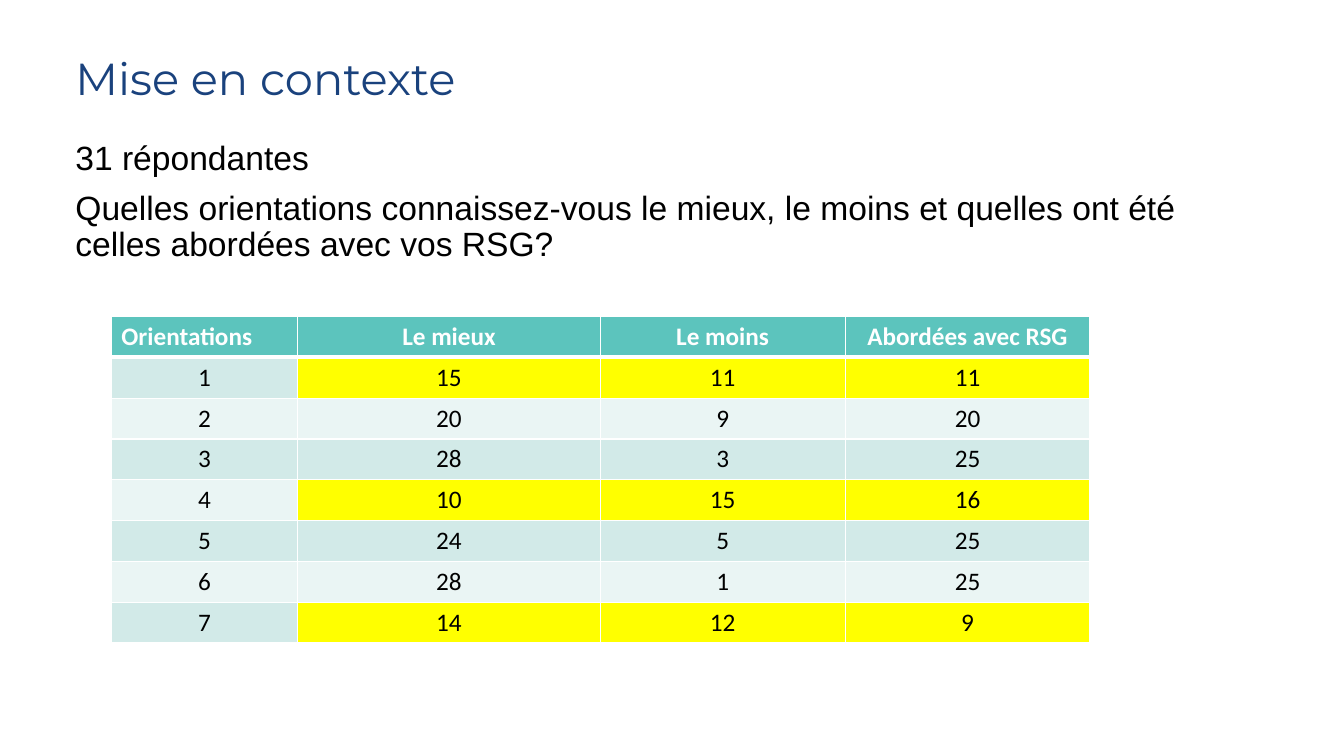
from pptx import Presentation
from pptx.dml.color import RGBColor
from pptx.enum.text import MSO_ANCHOR as Anchor, PP_ALIGN as Align
from pptx.oxml import parse_xml
from pptx.oxml.ns import nsdecls
from pptx.util import Pt

PX = 4572
WHITE, BLACK, NAVY = "FFFFFF", "000000", "1A427D"
TEAL, YELLOW = "5CC4BD", "FFFF00"
BANDS = ("D2EAE8", "EAF5F4")


def rgb(value):
    return RGBColor.from_string(value)


class Deck:
    def __init__(self, width, height):
        self.prs = Presentation()
        self.prs.slide_width, self.prs.slide_height = width * PX, height * PX
        self.s = self.prs.slides.add_slide(self.prs.slide_layouts[6])

    def style(self, p, font, size, color, bold=False):
        for r in p.runs:
            r.font.name, r.font.size, r.font.bold = font, Pt(size), bold
            r.font.color.rgb = rgb(color)

    def text(self, box, lines, font, size, color, anchor=Anchor.TOP):
        tf = self.s.shapes.add_textbox(*(v * PX for v in box)).text_frame
        tf.word_wrap, tf.vertical_anchor = True, anchor
        tf.text = "\n".join(lines)
        for i, p in enumerate(tf.paragraphs):
            p.line_spacing = 0.9
            p.space_before = Pt(10 if i else 0)
            self.style(p, font, size, color)

    def borders(self, cell, top, bottom):
        tc_pr = cell._tc.get_or_add_tcPr()
        widths = {"lnL": 1, "lnR": 1, "lnT": top, "lnB": bottom}
        for i, (side, width) in enumerate(widths.items()):
            tc_pr.insert(i, parse_xml(
                f'<a:{side} {nsdecls("a")} w="{Pt(width)}"><a:solidFill>'
                f'<a:srgbClr val="{WHITE}"/></a:solidFill></a:{side}>'))

    def table(self, left, top, widths, row_height, rows, highlighted):
        size = sum(widths), row_height * len(rows)
        frame = self.s.shapes.add_table(
            len(rows), len(widths), *(v * PX for v in (left, top, *size)))
        table = frame.table
        for column, width in zip(table.columns, widths):
            column.width = width * PX
        for i, values in enumerate(rows):
            table.rows[i].height = row_height * PX
            header = i == 0
            for j, value in enumerate(values):
                cell = table.cell(i, j)
                cell.text = str(value)
                p = cell.text_frame.paragraphs[0]
                p.alignment = Align.LEFT if header and j == 0 else Align.CENTER
                self.style(p, "Calibri", 18, WHITE if header else BLACK, header)
                fill = TEAL if header else BANDS[(i - 1) % 2]
                if i in highlighted and j > 0:
                    fill = YELLOW
                cell.fill.solid()
                cell.fill.fore_color.rgb = rgb(fill)
                self.borders(cell, 3 if i == 1 else 1, 3 if header else 1)


def main():
    deck = Deck(2667, 1500)
    deck.text((130, 100, 2408, 118), ["Mise en contexte"],
              "Montserrat", 32, NAVY, Anchor.BOTTOM)
    deck.text((130, 270, 2408, 1036), [
        "31 répondantes",
        "Quelles orientations connaissez-vous le mieux, le moins et quelles "
        "ont été celles abordées avec vos RSG?",
    ], "Arial", 24, BLACK)
    deck.table(221, 628, (370, 600, 486, 486), 81, [
        ("Orientations", "Le mieux", "Le moins", "Abordées avec RSG"),
        (1, 15, 11, 11),
        (2, 20, 9, 20),
        (3, 28, 3, 25),
        (4, 10, 15, 16),
        (5, 24, 5, 25),
        (6, 28, 1, 25),
        (7, 14, 12, 9),
    ], highlighted={1, 4, 7})
    deck.prs.save("out.pptx")


if __name__ == "__main__":
    main()
